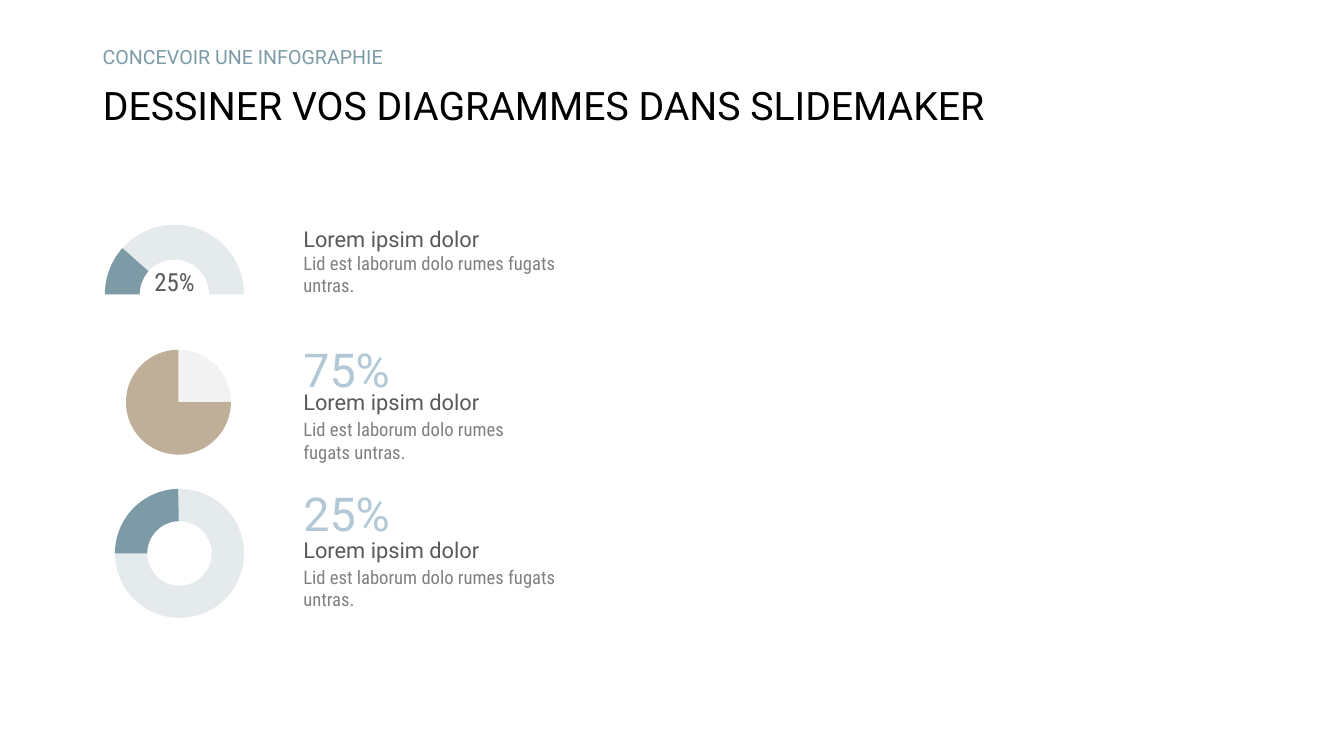
from collections import namedtuple

from pptx import Presentation
from pptx.dml.color import RGBColor
from pptx.enum.shapes import MSO_SHAPE as Preset
from pptx.enum.text import MSO_ANCHOR as Anchor, MSO_AUTO_SIZE as AutoSize, PP_ALIGN as Align
from pptx.util import Inches, Pt

BLACK = RGBColor(0x00, 0x00, 0x00)
DARK_GREY = RGBColor(0x59, 0x59, 0x59)
MID_GREY = RGBColor(0x80, 0x80, 0x80)
TEAL = RGBColor(0x7C, 0x9B, 0xA6)
PALE_TEAL = RGBColor(0xE5, 0xEB, 0xED)
PALE_GREY = RGBColor(0xF2, 0xF2, 0xF2)
SAND = RGBColor(0xBF, 0xAF, 0x99)
PALE_BLUE = RGBColor(0xB2, 0xC8, 0xD7)

REGULAR, CONDENSED = "Roboto", "Roboto Condensed"
ANGLE_UNIT = 0.6  # adjustment value of one degree
TEXT_LEFT = 2.91

Box = namedtuple("Box", "left top width height")
Style = namedtuple("Style", "font size color")

TITLE = Style(REGULAR, 28, BLACK)
KICKER = Style(REGULAR, 14, TEAL)
FIGURE = Style(REGULAR, 33.3, PALE_BLUE)
LABEL = Style(REGULAR, 15.6, DARK_GREY)
DETAIL = Style(CONDENSED, 13.3, MID_GREY)
GAUGE_FIGURE = Style(CONDENSED, 17.8, DARK_GREY)


def inches(box):
    return [Inches(length) for length in box]


def write(shape, text, style, align=Align.LEFT):
    shape.text_frame.text = text
    para = shape.text_frame.paragraphs[0]
    para.alignment = align
    para.font.name, para.font.size = style.font, Pt(style.size)
    para.font.color.rgb = style.color
    return para


def add_text(page, box, text, style, align=Align.LEFT, wrap=True):
    shape = page.shapes.add_textbox(*inches(box))
    shape.text_frame.word_wrap = wrap
    shape.text_frame.auto_size = AutoSize.SHAPE_TO_FIT_TEXT
    write(shape, text, style, align)


def add_shape(page, preset, box, color):
    shape = page.shapes.add_shape(preset, *inches(box))
    shape.shadow.inherit = False
    shape.fill.solid()
    shape.fill.fore_color.rgb = color
    shape.line.fill.background()
    return shape


def add_arc(page, box, color, end, thickness=0.25):
    """Draw a ring segment clockwise from nine o'clock to the end angle in degrees."""
    arc = add_shape(page, Preset.BLOCK_ARC, box, color)
    for index, value in enumerate((180 * ANGLE_UNIT, end * ANGLE_UNIT, thickness)):
        arc.adjustments[index] = value


def add_heading(page, box):
    kicker_height, title_height = 0.36, 0.57
    kicker = page.shapes.add_textbox(*inches(box._replace(height=kicker_height)))
    write(kicker, "CONCEVOIR UNE INFOGRAPHIE", KICKER)
    title = page.shapes.title
    title.left, title.top, title.width, title.height = inches(
        box._replace(top=box.top + box.height - title_height, height=title_height))
    write(title, "DESSINER VOS DIAGRAMMES DANS SLIDEMAKER", TITLE)
    for shape in (kicker, title):
        frame = shape.text_frame
        frame.word_wrap, frame.auto_size = True, AutoSize.NONE
        frame.vertical_anchor = Anchor.MIDDLE
        frame.paragraphs[0].line_spacing = 0.9


def add_caption(page, top, width, gap):
    """Place a label with its detail text the given gap below."""
    add_text(page, Box(TEXT_LEFT, top, 2, 0.36), "Lorem ipsim dolor", LABEL, wrap=False)
    add_text(page, Box(TEXT_LEFT, top + gap, width, 0.55),
             "Lid est laborum dolo rumes fugats untras.", DETAIL)


def add_figure(page, top, text):
    add_text(page, Box(TEXT_LEFT, top, 1.61, 0.66), text, FIGURE)


def add_gauge(page, box):
    add_arc(page, box, PALE_TEAL, end=360)
    add_arc(page, box, TEAL, end=221.6)
    figure_box = Box(box.left + box.width * 0.15, box.top + 0.37, box.width * 0.7, 0.4)
    add_text(page, figure_box, "25%", GAUGE_FIGURE, Align.CENTER)
    add_caption(page, box.top - 0.04, 2.86, gap=0.26)


def add_pie(page, box):
    add_shape(page, Preset.OVAL, box, PALE_GREY)
    pie = add_shape(page, Preset.PIE, box, SAND)
    pie.adjustments[0], pie.adjustments[1] = 0, 270 * ANGLE_UNIT
    add_figure(page, box.top - 0.14, "75%")
    add_caption(page, box.top + 0.34, 2.64, gap=0.29)


def add_ring(page, box):
    add_shape(page, Preset.DONUT, box, PALE_TEAL)
    add_arc(page, box, TEAL, end=268.8)
    add_figure(page, box.top - 0.09, "25%")
    add_caption(page, box.top + 0.43, 2.99, gap=0.28)


def main():
    deck = Presentation()
    deck.slide_width, deck.slide_height = Inches(13.33), Inches(7.5)
    page = deck.slides.add_slide(deck.slide_layouts.get_by_name("Title Only"))
    add_heading(page, Box(0.92, 0.4, 11.5, 0.95))
    add_gauge(page, Box(1.04, 2.23, 1.38, 1.38))
    add_pie(page, Box(1.25, 3.47, 1.04, 1.04))
    add_ring(page, Box(1.14, 4.85, 1.28, 1.28))
    deck.save("out.pptx")


if __name__ == "__main__":
    main()
